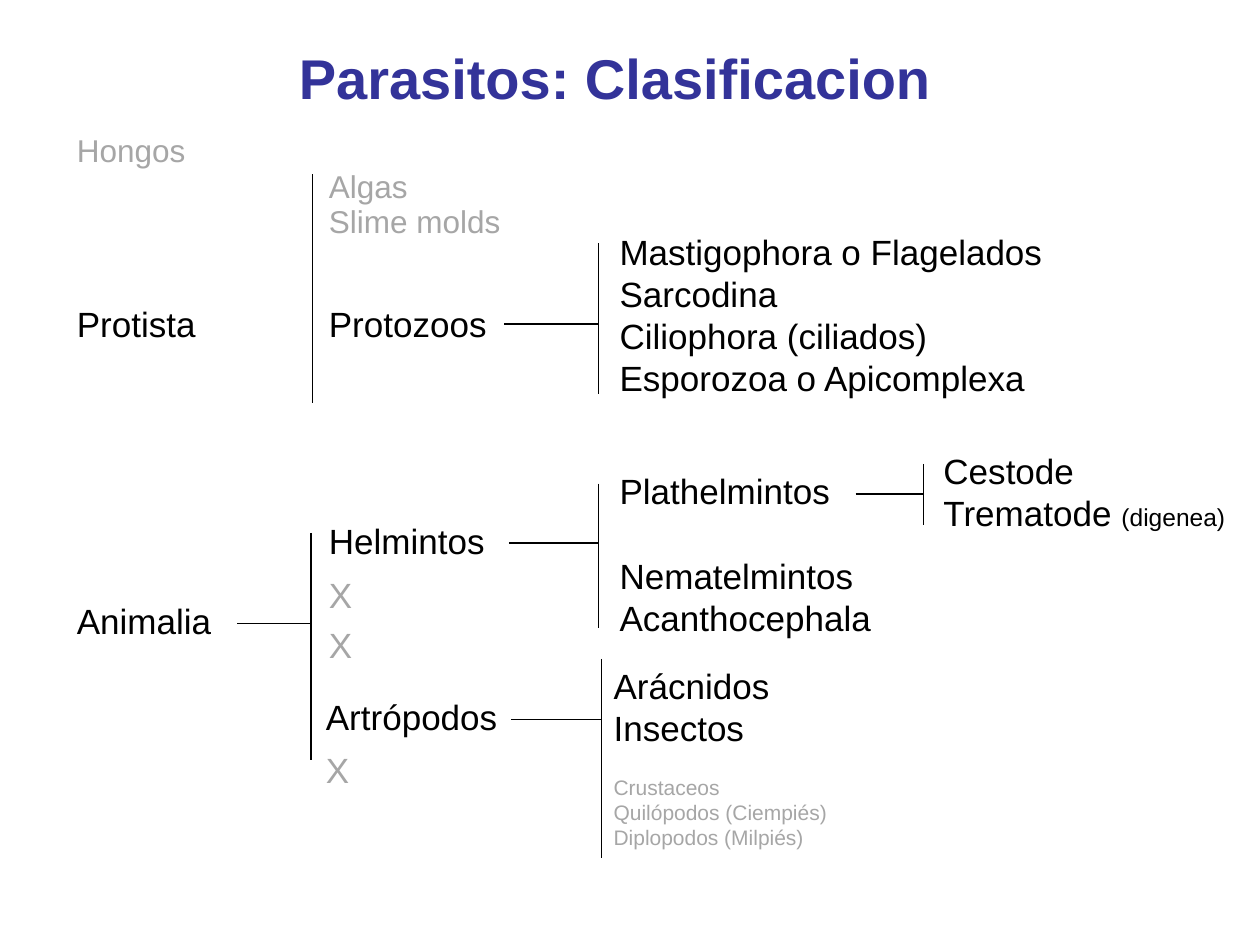
import pptx
import pptx.dml.color
import pptx.enum.shapes
import pptx.enum.text
import pptx.oxml.ns
import pptx.util
from lxml import etree
from pptx.util import Cm

COLORS = {"title": "333399", "main": "000000", "muted": "A6A6A6"}
FONT = "Arial"
KINGDOM, PHYLUM, ARTHROPOD, GROUP, ARACHNID, CLASS = 1.3, 6.38, 6.32, 12.24, 12.12, 18.77

LABELS = [
    ("Hongos", KINGDOM, 2.51, 2.69, 18, "muted"),
    ("Protista", KINGDOM, 5.97, 2.9, 20, "main"),
    ("Animalia", KINGDOM, 11.96, 3.23, 20, "main"),
    ("Algas", PHYLUM, 3.25, 2.11, 18, "muted"),
    ("Slime molds", PHYLUM, 3.94, 3.96, 18, "muted"),
    ("Protozoos", PHYLUM, 5.97, 3.72, 20, "main"),
    ("Helmintos", PHYLUM, 10.34, 3.66, 20, "main"),
    ("X", PHYLUM, 11.43, 0.99, 20, "muted"),
    ("X", PHYLUM, 12.45, 0.99, 20, "muted"),
    ("Artrópodos", ARTHROPOD, 13.89, 3.96, 20, "main"),
    ("X", ARTHROPOD, 14.96, 0.99, 20, "muted"),
]

BRACKETS = [
    (6.3, 3.51, 8.13, None),
    (12.07, 4.9, 7.95, (10.16, 6.53)),
    (6.27, 10.74, 15.32, (4.78, 12.57)),
    (12.07, 9.75, 12.65, (10.26, 10.95)),
    (18.62, 9.35, 10.59, (17.25, 9.96)),
    (12.12, 13.28, 17.3, (10.31, 14.5)),
]


def add_span(para, text, size, color, bold=False):
    span = para.add_run()
    span.text = text
    span.font.name = FONT
    span.font.size = pptx.util.Pt(size)
    span.font.bold = bold
    span.font.color.rgb = pptx.dml.color.RGBColor.from_string(COLORS[color])


def add_title(page, text):
    title = page.shapes.title
    title.left, title.top, title.width, title.height = Cm(5.77), Cm(0.74), Cm(19.05), Cm(1.6)
    frame = title.text_frame
    frame.vertical_anchor = pptx.enum.text.MSO_ANCHOR.TOP
    frame.auto_size = pptx.enum.text.MSO_AUTO_SIZE.SHAPE_TO_FIT_TEXT
    para = frame.paragraphs[0]
    para.alignment = pptx.enum.text.PP_ALIGN.LEFT
    add_span(para, text, 32, "title", bold=True)


def add_lines(page, left, top, width, height, lines):
    """Add a text box; each line is (space before in points, list of spans)."""
    box = page.shapes.add_textbox(Cm(left), Cm(top), Cm(width), Cm(height))
    frame = box.text_frame
    frame.word_wrap = False
    frame.margin_right = Cm(0.1)
    frame.auto_size = pptx.enum.text.MSO_AUTO_SIZE.SHAPE_TO_FIT_TEXT
    for index, (gap, spans) in enumerate(lines):
        para = frame.add_paragraph() if index else frame.paragraphs[0]
        para.space_before = pptx.util.Pt(gap)
        for span in spans:
            add_span(para, *span)


def add_line(page, x1, y1, x2, y2):
    line = page.shapes.add_connector(
        pptx.enum.shapes.MSO_CONNECTOR.STRAIGHT, Cm(x1), Cm(y1), Cm(x2), Cm(y2))
    line.line.color.rgb = pptx.dml.color.RGBColor.from_string(COLORS["main"])
    line.line.width = pptx.util.Pt(0.75)
    etree.SubElement(line._element.spPr, pptx.oxml.ns.qn("a:effectLst"))


def add_bracket(page, x, top, bottom, stem):
    add_line(page, x, top, x, bottom)
    if stem:
        start, y = stem
        add_line(page, start, y, x, y)


def plain(text, gap=0, size=20, color="main"):
    return gap, [(text, size, color)]


def main():
    deck = pptx.Presentation()
    deck.slide_width, deck.slide_height = Cm(25.4), Cm(19.05)
    page = deck.slides.add_slide(deck.slide_layouts[5])
    add_title(page, "Parasitos: Clasificacion")

    for text, left, top, width, size, color in LABELS:
        add_lines(page, left, top, width, 1.09 if size == 20 else 1.02,
                  [plain(text, size=size, color=color)])

    add_lines(page, GROUP, 4.52, 9.12, 3.68, [
        plain("Mastigophora o Flagelados"), plain("Sarcodina"),
        plain("Ciliophora (ciliados)"), plain("Esporozoa o Apicomplexa")])
    add_lines(page, GROUP, 9.35, 5.6, 3.63, [
        plain("Plathelmintos"), plain("Nematelmintos", gap=24), plain("Acanthocephala")])
    add_lines(page, CLASS, 8.94, 6.2, 1.96, [
        plain("Cestode"),
        (0, [("Trematode ", 20, "main"), ("(digenea)", 14, "main")])])
    add_lines(page, ARACHNID, 13.28, 4.85, 4.88, [
        plain("Arácnidos"), plain("Insectos"),
        plain("Crustaceos", gap=14.4, size=12, color="muted"),
        plain("Quilópodos (Ciempiés)", size=12, color="muted"),
        plain("Diplopodos (Milpiés)", size=12, color="muted")])

    for bracket in BRACKETS:
        add_bracket(page, *bracket)
    deck.save("out.pptx")


if __name__ == "__main__":
    main()
